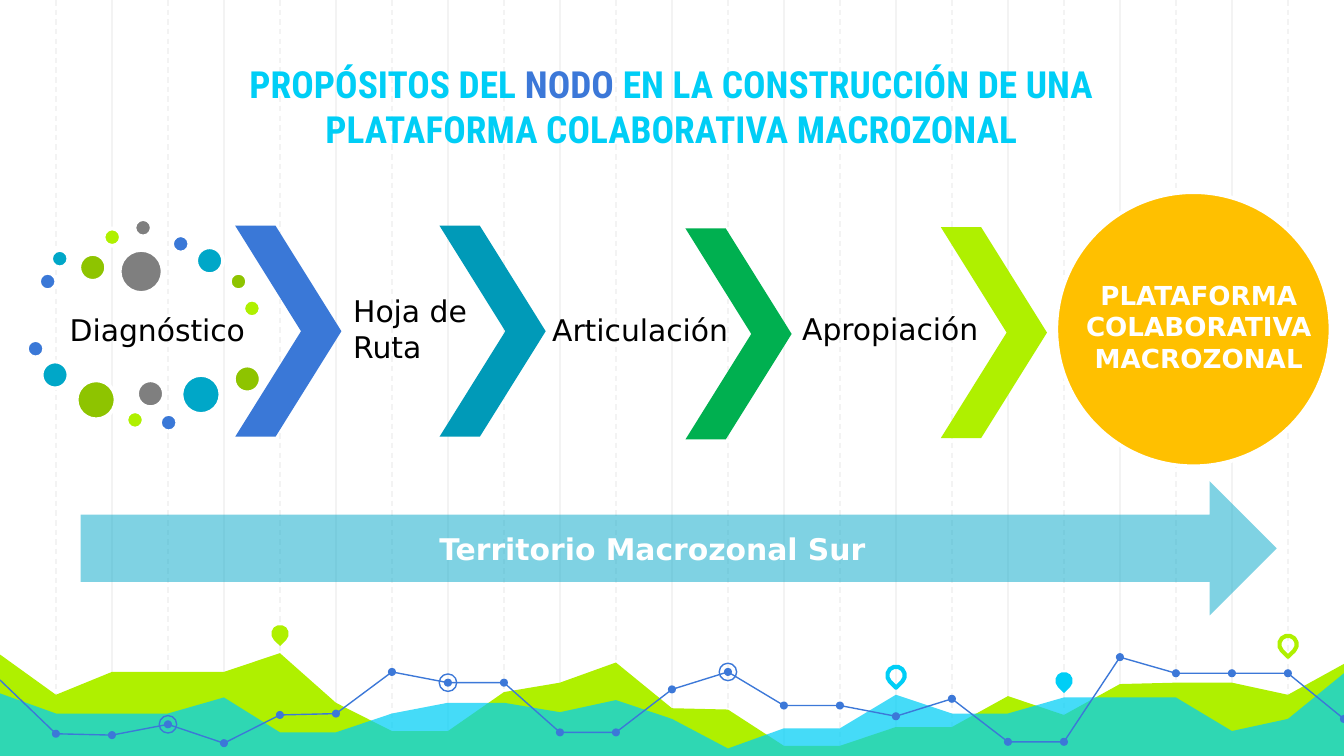
from dataclasses import dataclass

from lxml.etree import SubElement
from pptx import Presentation
from pptx.dml.color import RGBColor
from pptx.enum.dml import MSO_LINE
from pptx.enum.shapes import MSO_CONNECTOR, MSO_SHAPE
from pptx.enum.text import MSO_ANCHOR, PP_ALIGN
from pptx.oxml.ns import qn
from pptx.util import Inches, Pt


@dataclass(frozen=True)
class Theme:
    white: str = "FFFFFF"
    black: str = "000000"
    grid: str = "F3F3F3"
    lime: str = "AFF000"
    olive: str = "8EC400"
    green: str = "00B050"
    cyan: str = "00CEF6"
    teal: str = "00A7C8"
    deep_teal: str = "009AB8"
    blue: str = "3A78D7"
    trend_blue: str = "3C78D8"
    gray: str = "7F7F7F"
    amber: str = "FFC000"
    title_font: str = "Roboto Condensed"
    body_font: str = "DejaVu Sans"
    title_size: int = 20
    body_size: int = 16
    goal_size: int = 14


theme = Theme()


def paint(shape, fill=None, line=None, weight=0.75, opacity=100):
    shape.shadow.inherit = False
    if fill:
        shape.fill.solid()
        shape.fill.fore_color.rgb = RGBColor.from_string(fill)
        if opacity < 100:
            color = shape._element.spPr.find(qn("a:solidFill"))[0]
            SubElement(color, qn("a:alpha"), val=str(opacity * 1000))
    else:
        shape.fill.background()
    if line:
        shape.line.color.rgb = RGBColor.from_string(line)
        shape.line.width = Pt(weight)
    else:
        shape.line.fill.background()


def write(box, runs, size, font=theme.body_font, bold=False,
          align=PP_ALIGN.LEFT, anchor=MSO_ANCHOR.TOP, inset=0.05):
    frame = slide.shapes.add_textbox(*map(Inches, box)).text_frame
    frame.word_wrap = True
    frame.vertical_anchor = anchor
    frame.margin_top = frame.margin_bottom = Inches(inset)
    paragraph = frame.paragraphs[0]
    paragraph.alignment = align
    for text, color in runs:
        run = paragraph.add_run()
        run.text = text
        run.font.name = font
        run.font.size = Pt(size)
        run.font.bold = bold
        run.font.color.rgb = RGBColor.from_string(color)


# 16:9 slide
prs = Presentation()
prs.slide_width = Inches(10)
prs.slide_height = Inches(10 * 9 / 16)
slide = prs.slides.add_slide(prs.slide_layouts[6])
shapes = slide.shapes

# Background grid: solid and dashed lines alternate
columns = 24
step = 10 / columns
for column in range(1, columns):
    x = Inches(column * step)
    grid_line = shapes.add_connector(MSO_CONNECTOR.STRAIGHT, x, 0, x, prs.slide_height)
    grid_line.line.color.rgb = RGBColor.from_string(theme.grid)
    grid_line.line.width = Pt(0.75)
    if column % 2:
        grid_line.line.dash_style = MSO_LINE.DASH
    SubElement(grid_line._element.spPr, qn("a:effectLst"))

# Landscape areas and trend line: one height per grid column
lime_hills = [4.87, 5.17, 5, 5, 5, 4.86, 5.23, 5.44, 5.44, 5.15, 5.08, 4.93, 5.27,
              5.28, 5.55, 5.55, 5.41, 5.41, 5.18, 5.32, 5.09, 5.08, 5.08, 5.17, 4.94]
cyan_hills = [5.16, 5.31, 5.31, 5.31, 5.19, 5.45, 5.45, 5.31, 5.23, 5.23, 5.3, 5.21, 5.35,
              5.57, 5.42, 5.42, 5.17, 5.31, 5.31, 5.19, 5.19, 5.19, 5.44, 5.35, 5.01]
trend = [5.06, 5.46, 5.47, 5.39, 5.53, 5.32, 5.31, 5, 5.08, 5.08, 5.45, 5.45, 5.13,
         5, 5.25, 5.25, 5.33, 5.2, 5.52, 5.52, 4.89, 5.01, 5.01, 5.01, 5.35]
for heights, is_area, style in [
    (lime_hills, True, dict(fill=theme.lime)),
    (cyan_hills, True, dict(fill=theme.cyan, opacity=73)),
    (trend, False, dict(line=theme.trend_blue)),
]:
    points = [(Inches(i * step), Inches(y)) for i, y in enumerate(heights)]
    if is_area:
        points += [(prs.slide_width, prs.slide_height), (0, prs.slide_height)]
    outline = shapes.build_freeform(*points[0])
    outline.add_line_segments(points[1:], close=is_area)
    paint(outline.convert_to_shape(), **style)

# Trend markers, three of them ringed
ringed = {3, 8, 13}
for column, y in enumerate(trend):
    if column == 0:
        continue
    markers = [(0.06, dict(fill=theme.trend_blue))]
    if column in ringed:
        markers.append((0.13, dict(line=theme.trend_blue)))
    for size, style in markers:
        box = (column * step - size / 2, y - size / 2, size, size)
        paint(shapes.add_shape(MSO_SHAPE.OVAL, *map(Inches, box)), **style)

# Map pins
for column, top, style in [
    (5, 4.65, dict(fill=theme.lime)),
    (16, 4.96, dict(line=theme.cyan, weight=2.25)),
    (19, 5, dict(fill=theme.cyan)),
    (23, 4.73, dict(line=theme.lime, weight=2.25)),
]:
    box = (column * step - 0.065, top, 0.13, 0.13)
    pin = shapes.add_shape(MSO_SHAPE.TEAR, *map(Inches, box))
    pin.rotation = 135
    paint(pin, **style)

# Title
write((1.17, 0.44, 7.65, 0.78), [
    ("PROPÓSITOS DEL ", theme.cyan),
    ("NODO ", theme.trend_blue),
    ("EN LA CONSTRUCCIÓN DE UNA PLATAFORMA COLABORATIVA MACROZONAL", theme.cyan),
], theme.title_size, theme.title_font, True, PP_ALIGN.CENTER, MSO_ANCHOR.BOTTOM, 0.1)

# Ring of bubbles around the first stage
for left, top, size, color in [
    (0.29, 2.03, 0.13, theme.blue), (0.38, 1.86, 0.13, theme.teal),
    (0.59, 1.89, 0.2, theme.olive), (0.77, 1.7, 0.13, theme.lime),
    (1, 1.63, 0.13, theme.gray), (1.28, 1.75, 0.13, theme.blue),
    (1.46, 1.84, 0.2, theme.teal), (1.71, 2.03, 0.13, theme.olive),
    (1.81, 2.23, 0.13, theme.lime), (0.89, 1.86, 0.32, theme.gray),
    (0.2, 2.53, 0.13, theme.blue), (0.31, 2.69, 0.2, theme.teal),
    (0.57, 2.83, 0.29, theme.olive), (0.94, 3.06, 0.13, theme.lime),
    (1.02, 2.83, 0.2, theme.gray), (1.19, 3.08, 0.13, theme.blue),
    (1.35, 2.79, 0.29, theme.teal), (1.74, 2.72, 0.2, theme.olive),
]:
    bubble = shapes.add_shape(MSO_SHAPE.OVAL, *map(Inches, (left, top, size, size)))
    paint(bubble, color, theme.white, 2)

# Stages, each followed by a chevron
for stage, label_box, chevron_left, chevron_top, color in [
    ("Diagnóstico", (0.42, 2.27, 2.39, 0.37), 1.75, 1.68, theme.blue),
    ("Hoja de Ruta", (2.53, 2.13, 1.17, 0.64), 3.27, 1.68, theme.deep_teal),
    ("Articulación", (4.01, 2.27, 1.55, 0.37), 5.1, 1.7, theme.green),
    ("Apropiación", (5.87, 2.26, 1.55, 0.37), 7, 1.69, theme.lime),
]:
    box = (chevron_left, chevron_top, 0.79, 1.57)
    chevron = shapes.add_shape(MSO_SHAPE.CHEVRON, *map(Inches, box))
    chevron.adjustments[0] = 0.62
    paint(chevron, color)
    write(label_box, [(stage, theme.black)], theme.body_size)

# Goal
goal = shapes.add_shape(MSO_SHAPE.OVAL, *map(Inches, (7.86, 1.43, 2.04, 2.04)))
paint(goal, theme.amber, theme.white, 2)
write((7.95, 2.03, 1.94, 0.81), [("PLATAFORMA COLABORATIVA MACROZONAL", theme.white)],
      theme.goal_size, bold=True, align=PP_ALIGN.CENTER)

# Territory arrow
territory = shapes.add_shape(MSO_SHAPE.RIGHT_ARROW, *map(Inches, (0.6, 3.58, 8.9, 1)))
paint(territory, theme.teal, opacity=50)
write((0.94, 3.9, 7.83, 0.37), [("Territorio Macrozonal Sur", theme.white)],
      theme.body_size, bold=True, align=PP_ALIGN.CENTER)

prs.save("out.pptx")
